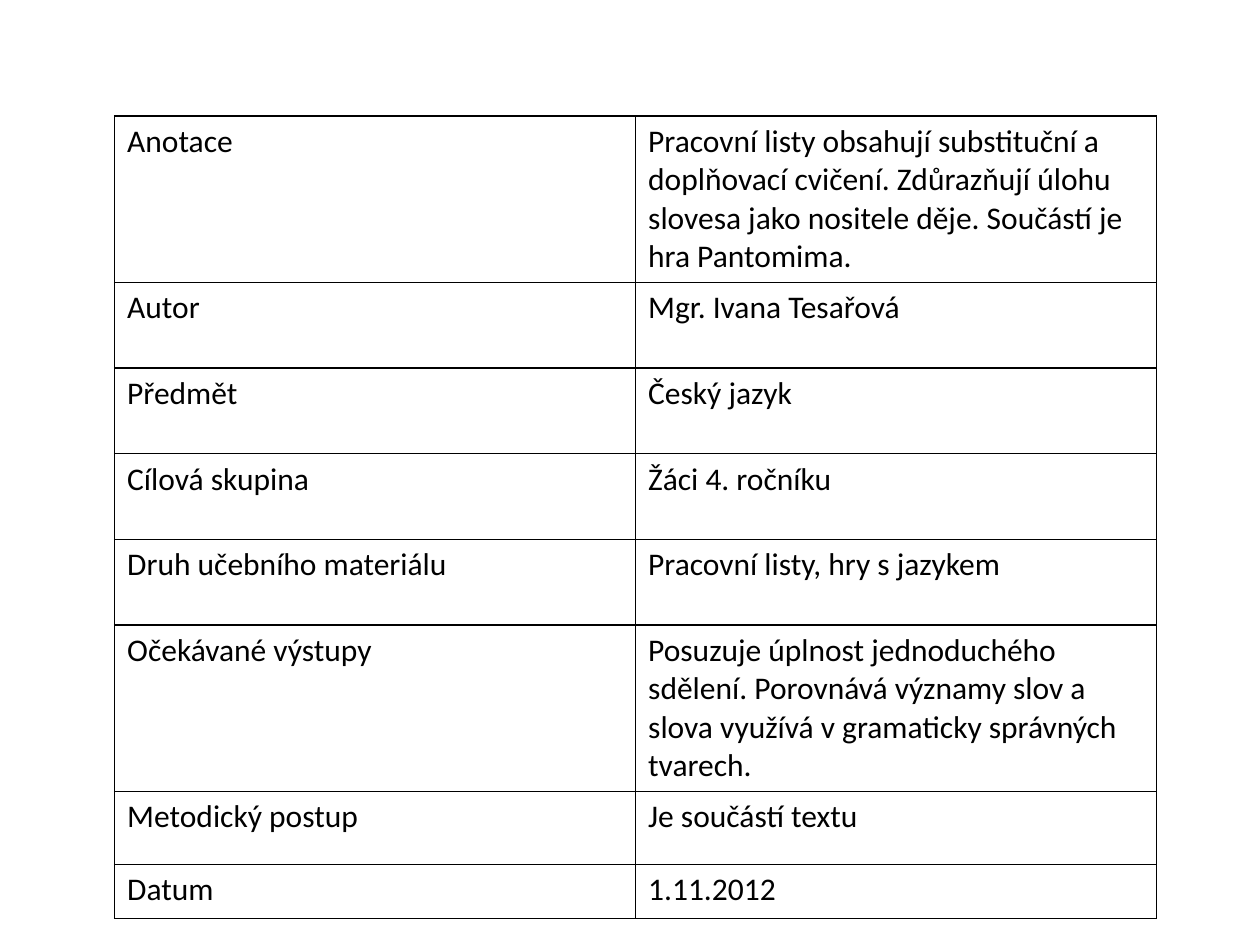
import pptx
import pptx.util
import pptx.dml.color
import pptx.oxml.ns
from lxml import etree

COLORS = {"text": "000000", "border": "000000", "cell": "FFFFFF"}

# Label, description and row height in inches
ROWS = [
    ("Anotace", "Pracovní listy obsahují substituční a doplňovací cvičení. "
     "Zdůrazňují úlohu slovesa jako nositele děje. Součástí je hra Pantomima.", 1.27),
    ("Autor", "Mgr. Ivana Tesařová", 0.68),
    ("Předmět", "Český jazyk", 0.68),
    ("Cílová skupina", "Žáci 4. ročníku", 0.68),
    ("Druh učebního materiálu", "Pracovní listy, hry s jazykem", 0.68),
    ("Očekávané výstupy", "Posuzuje úplnost jednoduchého sdělení. Porovnává významy "
     "slov a slova využívá v gramaticky správných tvarech.", 1.27),
    ("Metodický postup", "Je součástí textu", 0.58),
    ("Datum", "1.11.2012", 0.43),
]


def add_borders(cell):
    properties = cell._tc.get_or_add_tcPr()
    for side in ("a:lnL", "a:lnR", "a:lnT", "a:lnB"):
        line = etree.SubElement(properties, pptx.oxml.ns.qn(side), w=str(pptx.util.Pt(1)))
        fill = etree.SubElement(line, pptx.oxml.ns.qn("a:solidFill"))
        etree.SubElement(fill, pptx.oxml.ns.qn("a:srgbClr"), val=COLORS["border"])


# Slide
presentation = pptx.Presentation()
presentation.slide_width = pptx.util.Inches(10)
presentation.slide_height = pptx.util.Inches(7.5)
slide = presentation.slides.add_slide(presentation.slide_layouts[6])

# Annotation table
annotation = slide.shapes.add_table(
    len(ROWS), 2, pptx.util.Inches(0.91), pptx.util.Inches(0.92),
    pptx.util.Inches(8.27), pptx.util.Inches(sum(row[2] for row in ROWS))).table
annotation.first_row = False
annotation.horz_banding = False

# Rows and cells
for index, (label, description, height) in enumerate(ROWS):
    annotation.rows[index].height = pptx.util.Inches(height)
    for column, text in enumerate((label, description)):
        cell = annotation.cell(index, column)
        add_borders(cell)
        cell.fill.solid()
        cell.fill.fore_color.rgb = pptx.dml.color.RGBColor.from_string(COLORS["cell"])
        run = cell.text_frame.paragraphs[0].add_run()
        run.text = text
        run.font.name = "Calibri"
        run.font.size = pptx.util.Pt(18)
        run.font.color.rgb = pptx.dml.color.RGBColor.from_string(COLORS["text"])

presentation.save("out.pptx")
